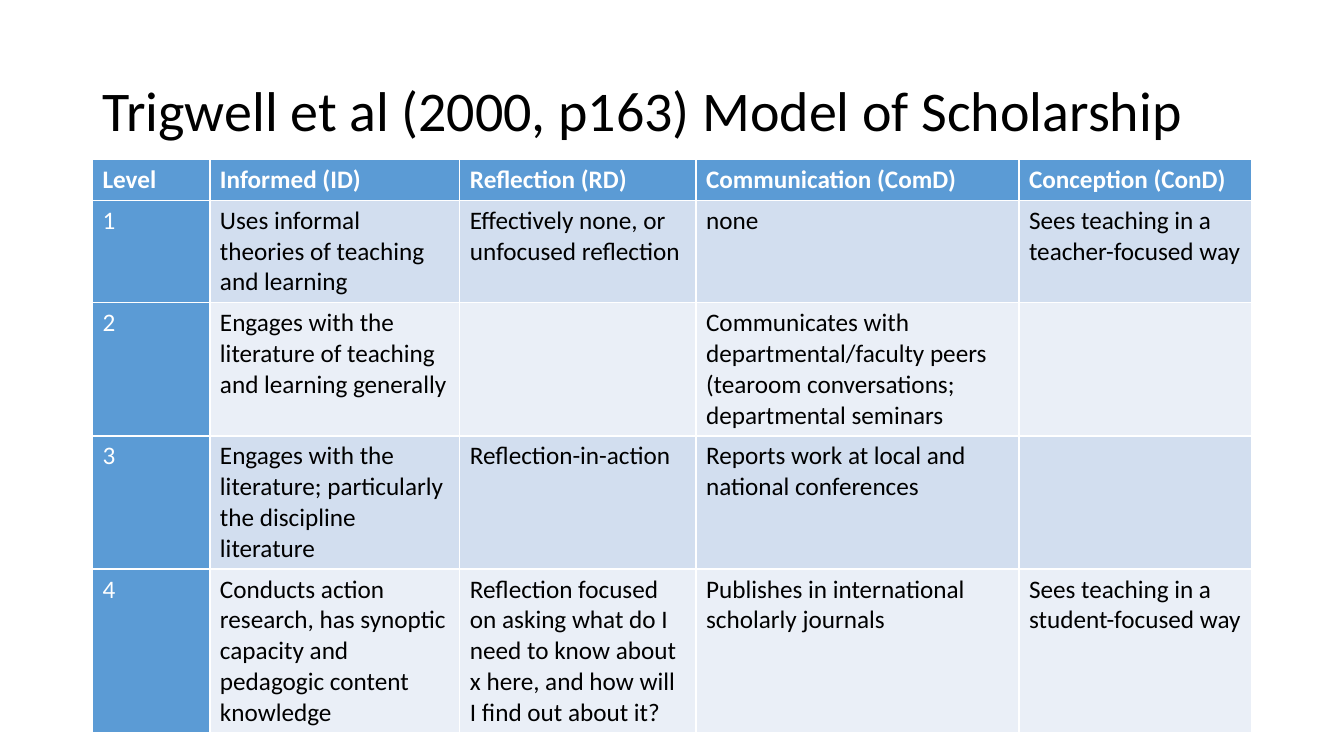
from pptx import Presentation
from pptx.dml.color import RGBColor
from pptx.enum import text
from pptx.util import Cm, Pt

TITLE = "Trigwell et al (2000, p163) Model of Scholarship"
HEADER = ["Level", "Informed (ID)", "Reflection (RD)", "Communication (ComD)", "Conception (ConD)"]
LEVELS = [
    ["1", "Uses informal theories of teaching and learning",
     "Effectively none, or unfocused reflection", "none",
     "Sees teaching in a teacher-focused way"],
    ["2", "Engages with the literature of teaching and learning generally", "",
     "Communicates with departmental/faculty peers (tearoom conversations; departmental seminars", ""],
    ["3", "Engages with the literature; particularly the discipline literature",
     "Reflection-in-action", "Reports work at local and national conferences", ""],
    ["4", "Conducts action research, has synoptic capacity and pedagogic content knowledge",
     "Reflection focused on asking what do I need to know about x here, and how will I find out about it?",
     "Publishes in international scholarly journals",
     "Sees teaching in a student-focused way"],
]
COLUMN_WIDTHS = [2.96, 6.3, 5.95, 8.14, 5.86]
ROW_HEIGHT = 1.03
LEFT = 2.33

FONT = "Calibri"
BLACK = RGBColor(0x00, 0x00, 0x00)
WHITE = RGBColor(0xFF, 0xFF, 0xFF)
BLUE = RGBColor(0x5B, 0x9B, 0xD5)
BANDS = [RGBColor(0xD2, 0xDE, 0xEF), RGBColor(0xEA, 0xEF, 0xF7)]


def set_font(paragraph, size, color, bold=False):
    font = paragraph.font
    font.name, font.size, font.bold = FONT, Pt(size), bold
    font.color.rgb = color


def add_title(slide):
    title = slide.shapes.title
    title.left, title.top = Cm(LEFT), Cm(1.01)
    title.width, title.height = Cm(sum(COLUMN_WIDTHS)), Cm(3.68)
    frame = title.text_frame
    frame.text = TITLE
    frame.auto_size = text.MSO_AUTO_SIZE.NONE
    frame.vertical_anchor = text.MSO_ANCHOR.MIDDLE
    paragraph = frame.paragraphs[0]
    paragraph.alignment = text.PP_ALIGN.LEFT
    paragraph.line_spacing = 0.9
    set_font(paragraph, 40, BLACK)


def add_levels_table(slide):
    """Add the table; its rows grow to fit their text."""
    rows = [HEADER] + LEVELS
    table = slide.shapes.add_table(
        len(rows), len(HEADER), Cm(LEFT), Cm(4.02),
        Cm(sum(COLUMN_WIDTHS)), Cm(ROW_HEIGHT * len(rows))).table
    for column, width in zip(table.columns, COLUMN_WIDTHS):
        column.width = Cm(width)
    for row_index, row in enumerate(rows):
        for column_index, words in enumerate(row):
            cell = table.cell(row_index, column_index)
            heading = row_index == 0 or column_index == 0
            cell.text = words
            cell.fill.solid()
            cell.fill.fore_color.rgb = BLUE if heading else BANDS[(row_index - 1) % 2]
            set_font(cell.text_frame.paragraphs[0], 18,
                     WHITE if heading else BLACK, bold=row_index == 0)


def main():
    presentation = Presentation()
    presentation.slide_width, presentation.slide_height = Cm(33.87), Cm(19.05)
    slide = presentation.slides.add_slide(presentation.slide_layouts[5])
    add_title(slide)
    add_levels_table(slide)
    presentation.save("out.pptx")


if __name__ == "__main__":
    main()
